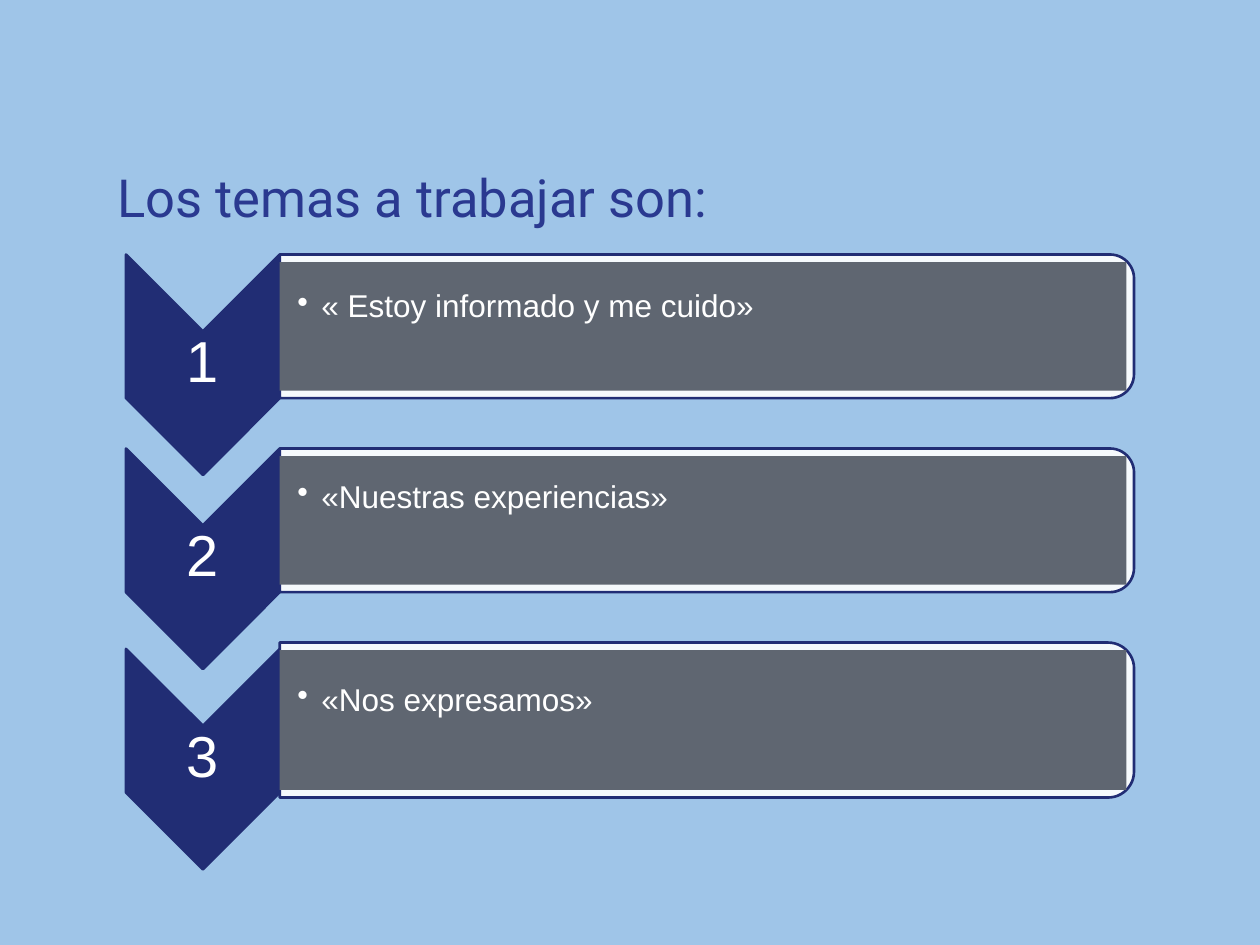
from lxml import etree
from pptx import Presentation
from pptx.dml.color import RGBColor
from pptx.enum import shapes, text
from pptx.oxml.ns import qn
from pptx.util import Inches, Pt

SKY = RGBColor(0x9F, 0xC5, 0xE8)
NAVY = RGBColor(0x21, 0x2D, 0x74)
INDIGO = RGBColor(0x2A, 0x39, 0x90)
GRAY = RGBColor(0x5F, 0x66, 0x71)
WHITE = RGBColor(0xFF, 0xFF, 0xFF)

KIND = shapes.MSO_SHAPE
ALIGN = text.PP_ALIGN
ANCHOR = text.MSO_ANCHOR

# number, topic, chevron top, panel top, panel height, space under the text
ROWS = [
    ("1", "« Estoy informado y me cuido»", 2.02, 2.02, 1.14, 0.31),
    ("2", "«Nuestras experiencias»", 3.56, 3.56, 1.14, 0.36),
    ("3", "«Nos expresamos»", 5.15, 5.1, 1.23, 0.31),
]
LEFT, CHEVRON_W, CHEVRON_H = 1, 1.22, 1.75
PANEL_X, PANEL_W, BAR_W = 2.22, 6.78, 6.72


def write(shape, words, size, color=WHITE, font="Arial", align=ALIGN.LEFT,
          anchor=ANCHOR.MIDDLE, insets=(0.02, 0.02, 0.02, 0.02), spacing=0.9):
    """Put one paragraph in a shape; insets are left, top, right, bottom."""
    frame = shape.text_frame
    frame.word_wrap = True
    frame.auto_size = text.MSO_AUTO_SIZE.NONE
    frame.vertical_anchor = anchor
    (frame.margin_left, frame.margin_top,
     frame.margin_right, frame.margin_bottom) = map(Inches, insets)
    para = frame.paragraphs[0]
    para.alignment, para.line_spacing = align, spacing
    run = para.add_run()
    run.text = words
    run.font.size, run.font.name = Pt(size), font
    run.font.color.rgb = color
    return para


def bullet(para, indent):
    props = para._p.get_or_add_pPr()
    props.set("marL", str(Inches(indent)))
    props.set("indent", str(-Inches(indent)))
    tint = etree.SubElement(props, qn("a:buClr"))
    etree.SubElement(tint, qn("a:srgbClr"), val=str(WHITE))
    etree.SubElement(props, qn("a:buChar"), char="•")


def block(slide, kind, x, y, w, h, fill, line=None):
    shape = slide.shapes.add_shape(kind, *map(Inches, (x, y, w, h)))
    shape.shadow.inherit = False
    shape.fill.solid()
    shape.fill.fore_color.rgb = fill
    if line is None:
        shape.line.fill.background()
    else:
        shape.line.color.rgb = line
        shape.line.width = Pt(1.5)
    return shape


def turned(slide, kind, x, y, w, h, fill, adjust):
    """Add a shape turned 90 degrees that fills the given visible box."""
    shape = block(slide, kind, x + (w - h) / 2, y + (h - w) / 2, h, w, fill, NAVY)
    shape.rotation = 90
    for i, value in enumerate(adjust):
        shape.adjustments[i] = value
    return shape


def add_row(slide, number, topic, top, panel_y, panel_h, below):
    turned(slide, KIND.CHEVRON, LEFT, top, CHEVRON_W, CHEVRON_H, NAVY, [0.5])
    label = slide.shapes.add_textbox(
        *map(Inches, (LEFT, top + CHEVRON_W / 2, CHEVRON_W, 0.52)))
    write(label, number, 33, align=ALIGN.CENTER)

    panel = turned(slide, KIND.ROUND_2_SAME_RECTANGLE, PANEL_X, panel_y,
                   PANEL_W, panel_h, WHITE, [0.167, 0])
    tint = panel.fill._xPr.find(qn("a:solidFill"))[0]
    etree.SubElement(tint, qn("a:alpha"), val="90000")

    bar = block(slide, KIND.RECTANGLE, PANEL_X, panel_y + 0.06,
                BAR_W, panel_h - 0.12, GRAY)
    para = write(bar, topic, 18, insets=(0.14, 0.01, 0.01, below))
    bullet(para, 0.19)


def add_title(slide, words):
    title = slide.shapes.title
    title.left, title.top, title.width, title.height = map(
        Inches, (0.83, 0.6, 8, 1.26))
    write(title, words, 30, color=INDIGO, font="Roboto", anchor=ANCHOR.BOTTOM,
          insets=(0.1, 0.05, 0.1, 0.05), spacing=1.0)


def main():
    deck = Presentation()
    deck.slide_width, deck.slide_height = Inches(10), Inches(7.5)
    slide = deck.slides.add_slide(deck.slide_layouts[5])
    slide.background.fill.solid()
    slide.background.fill.fore_color.rgb = SKY
    add_title(slide, "Los temas a trabajar son:")
    for row in ROWS:
        add_row(slide, *row)
    deck.save("out.pptx")


if __name__ == "__main__":
    main()
